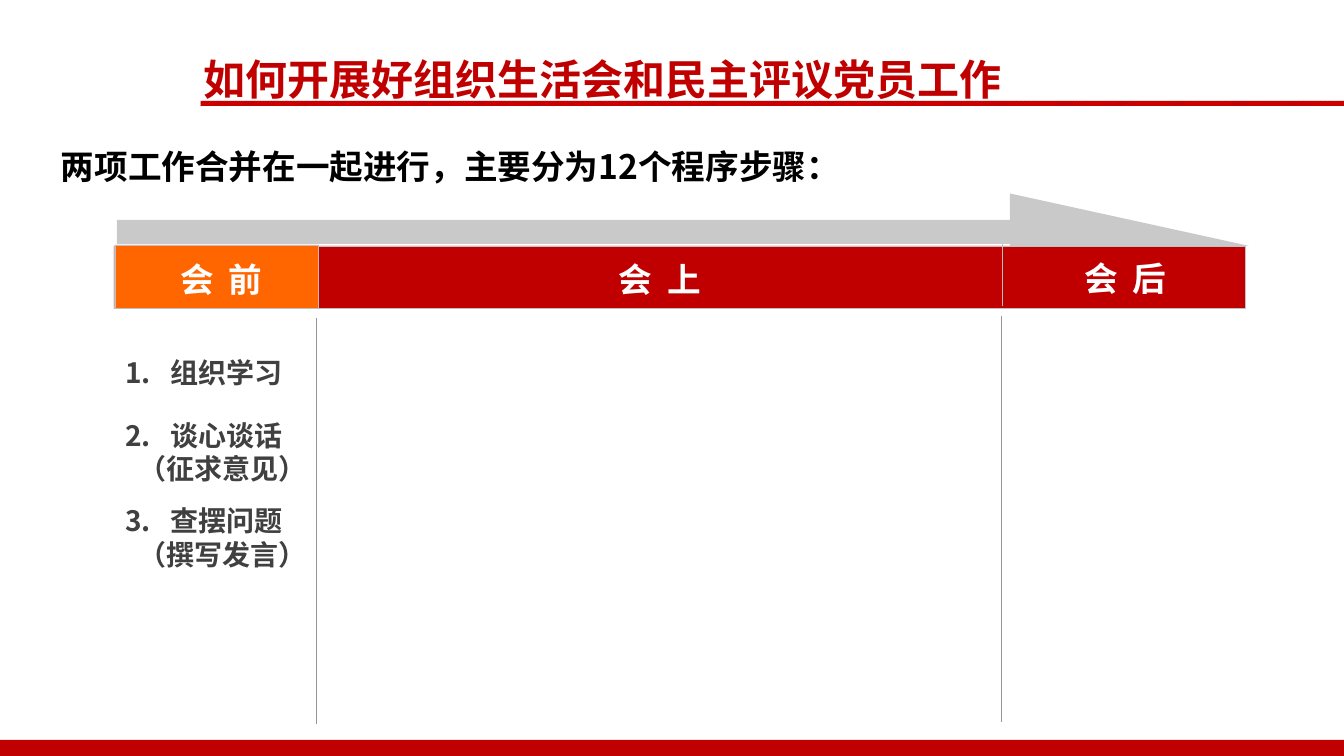
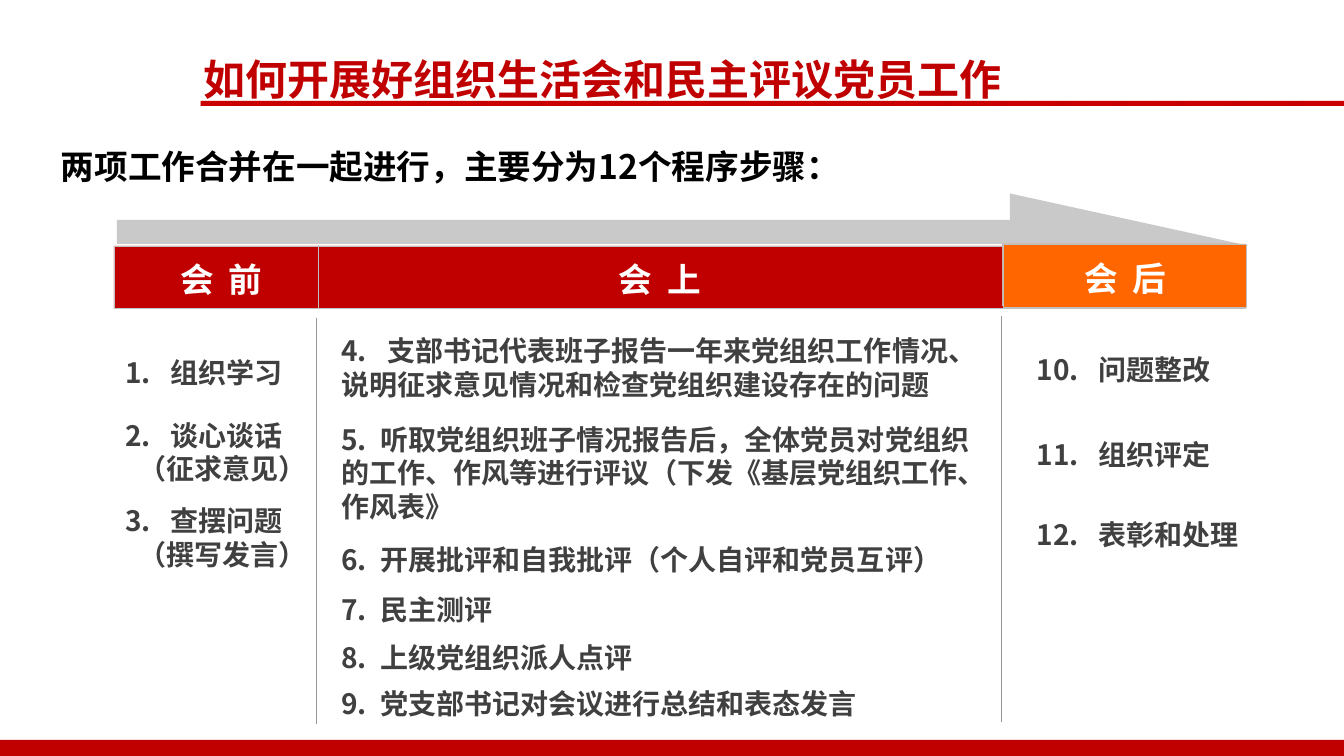
from lxml.etree import SubElement
from pptx import Presentation
from pptx.dml.color import RGBColor
from pptx.enum.dml import MSO_PATTERN
from pptx.enum.shapes import MSO_CONNECTOR, MSO_SHAPE
from pptx.enum.text import MSO_ANCHOR, MSO_AUTO_SIZE, PP_ALIGN
from pptx.oxml.ns import qn
from pptx.util import Pt

FONT = "Noto Sans CJK SC"
RED, BRIGHT, ORANGE, WHITE = "C00000", "FF0000", "FF6600", "FFFFFF"
BLACK, TEXT, ARROW, EDGE, DIVIDER = "000000", "404040", "C9C9C9", "C0C0C0", "969696"

TITLE = "如何开展好组织生活会和民主评议党员工作"
LEAD = "两项工作合并在一起进行，主要分为12个程序步骤："

PHASES = {
    "before": {
        "label": "会 前", "label_box": (99.4, 181.4, 117.4, 36),
        "cell": (82.1, 175, 145.4, 45.4), "x": 82.5, "w": 203, "tab": 32,
        "steps": [
            (250.6, "1.", "组织学习", ""),
            (295.2, "2.", "谈心谈话", "（征求意见）"),
            (356.4, "3.", "查摆问题", "（撰写发言）"),
        ],
    },
    "during": {
        "label": "会 上", "label_box": (228.2, 181.4, 486.7, 36),
        "cell": (227.5, 175, 488.2, 45.4), "x": 236.5, "w": 480, "tab": 28,
        "steps": [
            (234.7, "4.", "支部书记代表班子报告一年来党组织工作情况、"
                          "说明征求意见情况和检查党组织建设存在的问题", ""),
            (298.1, "5.", "听取党组织班子情况报告后，全体党员对党组织的工作、"
                          "作风等进行评议（下发《基层党组织工作、作风表》", ""),
            (383.8, "6.", "开展批评和自我批评（个人自评和党员互评）", ""),
            (419.8, "7.", "民主测评", ""),
            (454.3, "8.", "上级党组织派人点评", ""),
            (486.7, "9.", "党支部书记对会议进行总结和表态发言", ""),
        ],
    },
    "after": {
        "label": "会 后", "label_box": (745.2, 180.7, 117.4, 36),
        "cell": (716.4, 174.2, 173.5, 45.4), "x": 733.5, "w": 194, "tab": 44,
        "steps": [
            (248.4, "10.", "问题整改", ""),
            (308.9, "11.", "组织评定", ""),
            (365.8, "12.", "表彰和处理", ""),
        ],
    },
}
SLIDES = [("before", ["before"]), ("after", ["before", "during", "after"])]
LINES = [
    (226.1, 226.8, 517, DIVIDER), (715, 225.4, 515.5, DIVIDER),
    (227.5, 175, 220.3, EDGE), (715.7, 174.2, 218.9, EDGE),
]


def color(value):
    """Turn a hex string into a colour."""
    return RGBColor.from_string(value)


def add_block(s, box, fill=None, line=None, kind=MSO_SHAPE.RECTANGLE):
    """Add a flat preset shape."""
    sp = s.shapes.add_shape(kind, *map(Pt, box))
    sp.shadow.inherit = False
    if fill:
        sp.fill.solid()
        sp.fill.fore_color.rgb = color(fill)
    else:
        sp.fill.background()
    if line:
        sp.line.color.rgb = color(line)
        sp.line.width = Pt(0.25)
    else:
        sp.line.fill.background()
    return sp


def add_line(s, x, top, bottom, stroke):
    """Add a thin vertical line."""
    cx = s.shapes.add_connector(MSO_CONNECTOR.STRAIGHT, Pt(x), Pt(top), Pt(x), Pt(bottom))
    cx.line.color.rgb = color(stroke)
    cx.line.width = Pt(0.25)
    SubElement(cx._element.spPr, qn("a:effectLst"))


def add_run(p, text, size, ink, spacing=0):
    """Add bold text to a paragraph."""
    r = p.add_run()
    r.text = text
    r.font.color.rgb = color(ink)
    for name, value in {"size": Pt(size), "bold": True, "name": FONT}.items():
        setattr(r.font, name, value)
    props = r._r.get_or_add_rPr()
    SubElement(props, qn("a:ea"), typeface=FONT)
    if spacing:
        props.set("spc", str(spacing))


def add_box(s, box, wrap=True):
    """Add a text box and return its text frame."""
    tf = s.shapes.add_textbox(*map(Pt, box)).text_frame
    tf.word_wrap = wrap
    tf.auto_size = MSO_AUTO_SIZE.SHAPE_TO_FIT_TEXT
    return tf


def add_frame(s):
    """Draw the title, rule, bottom band and lead sentence."""
    rule = add_block(s, (143.3, 72, 816.7, 3.6), RED)
    rule.fill.patterned()
    rule.fill.pattern = MSO_PATTERN.DARK_UPWARD_DIAGONAL
    rule.fill.fore_color.rgb = color(BRIGHT)
    rule.fill.back_color.rgb = color(RED)
    add_block(s, (0, 528.5, 960, 11.5), RED)
    p = add_box(s, (138.2, 16.6, 590.4, 61.9), wrap=False).paragraphs[0]
    p.line_spacing = 1.5
    add_run(p, TITLE, 30, RED)
    lead = add_block(s, (33.8, 87.1, 625.7, 54.7), kind=MSO_SHAPE.ROUNDED_RECTANGLE)
    tf = lead.text_frame
    tf.word_wrap = True
    tf.vertical_anchor = MSO_ANCHOR.MIDDLE
    p = tf.paragraphs[0]
    p.alignment = PP_ALIGN.JUSTIFY
    p.line_spacing = 1.3
    add_run(p, LEAD, 24, BLACK)


def add_header(s, active):
    """Draw the arrow, the phase bar and its labels."""
    add_block(s, (81.4, 175.7, 807.8, 44.6), RED, EDGE)
    for line in LINES:
        add_line(s, *line)
    add_block(s, (83.5, 157, 641.5, 17.3), ARROW)
    add_block(s, (721.4, 138.2, 170.6, 37.4), ARROW, kind=MSO_SHAPE.RIGHT_TRIANGLE)
    add_block(s, PHASES[active]["cell"], ORANGE, EDGE)
    for phase in PHASES.values():
        p = add_box(s, phase["label_box"]).paragraphs[0]
        p.alignment = PP_ALIGN.CENTER
        add_run(p, phase["label"], 24, WHITE, spacing=270)


def add_steps(s, phase):
    """List the numbered steps of one phase."""
    for y, number, text, note in phase["steps"]:
        tf = add_box(s, (phase["x"], y, phase["w"], 31.7))
        p = tf.paragraphs[0]
        stop = 33 if number == "4." else phase["tab"]
        tabs = SubElement(p._p.get_or_add_pPr(), qn("a:tabLst"))
        SubElement(tabs, qn("a:tab"), pos=str(Pt(stop)), algn="l")
        add_run(p, f"{number}\t{text}", 20, TEXT)
        if note:
            p = tf.add_paragraph()
            p._p.get_or_add_pPr().set("marL", str(Pt(9)))
            add_run(p, note, 20, TEXT)


def main():
    """Build and save the slides."""
    prs = Presentation()
    prs.slide_width, prs.slide_height = Pt(960), Pt(540)
    for active, shown in SLIDES:
        s = prs.slides.add_slide(prs.slide_layouts[6])
        add_frame(s)
        add_header(s, active)
        for name in shown:
            add_steps(s, PHASES[name])
    prs.save("out.pptx")


if __name__ == "__main__":
    main()
